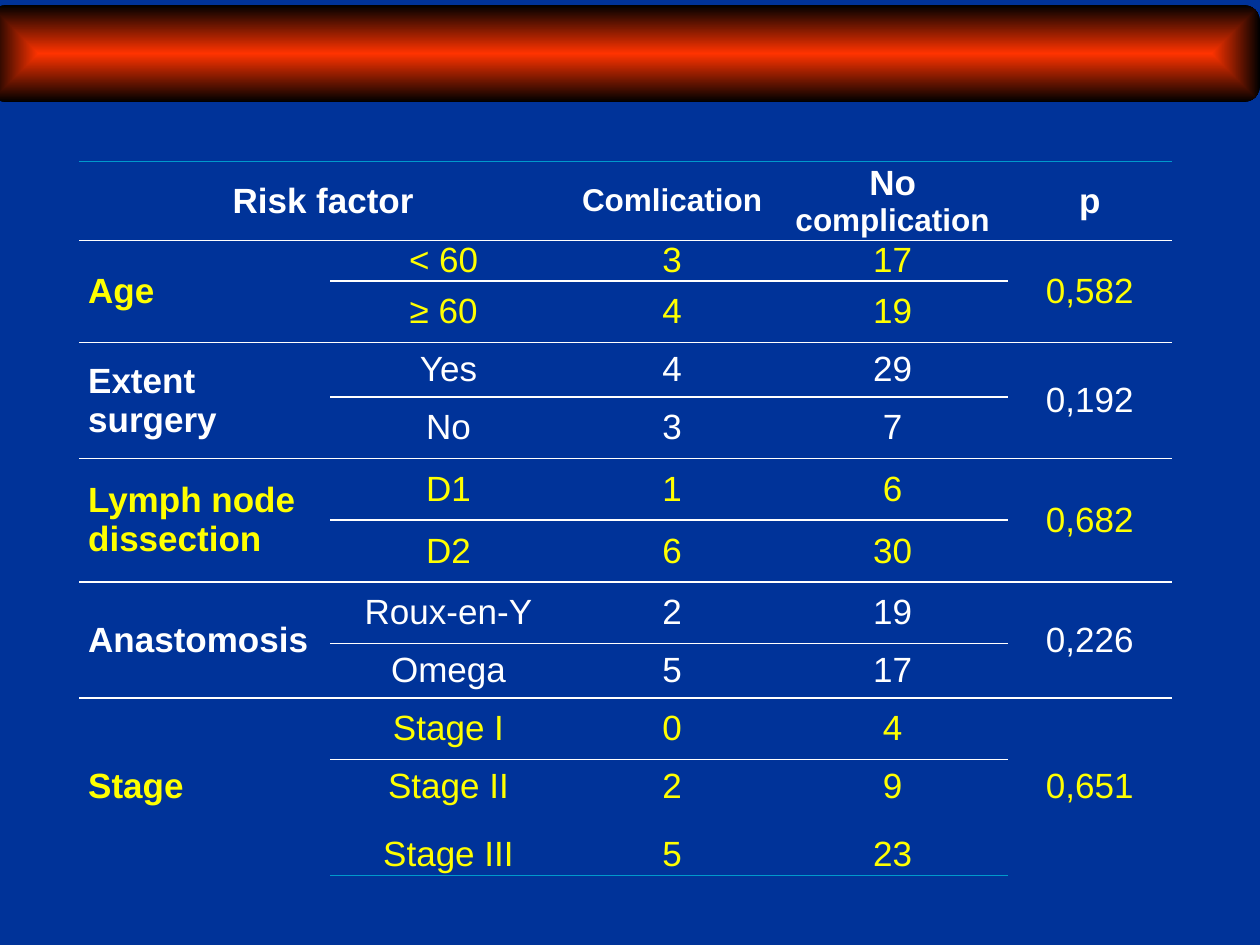
from dataclasses import dataclass

from lxml.etree import SubElement
from pptx import Presentation
from pptx.dml.color import RGBColor
from pptx.enum.shapes import MSO_SHAPE
from pptx.enum.text import MSO_ANCHOR, PP_ALIGN
from pptx.oxml.ns import qn
from pptx.util import Inches, Pt


@dataclass(frozen=True)
class Theme:
    background: str = "003399"
    banner_centre: str = "FF3300"
    banner_edge: str = "000000"
    white: str = "FFFFFF"
    yellow: str = "FFFF00"
    frame: str = "0099CC"
    font: str = "Arial"
    body_size: float = 20
    small_size: float = 18
    line_width: float = 1


THEME = Theme()

COLUMN_WIDTHS = [1.99, 1.88, 1.67, 1.83, 1.3]
ROW_HEIGHTS = [0.63, 0.32, 0.49, 0.43, 0.49, 0.49, 0.49, 0.49, 0.43, 0.49, 0.43, 0.49]

# Column, then (text, size) for each paragraph
HEADERS = [
    (0, [("Risk factor", THEME.body_size)]),
    (2, [("Comlication", THEME.small_size)]),
    (3, [("No", THEME.body_size), ("complication", THEME.small_size)]),
    (4, [("p", THEME.body_size)]),
]

# Risk factor, p value, then level, complication and no complication counts
GROUPS = [
    ("Age", "0,582", [("< 60 ", "3", "17"), ("≥ 60 ", "4", "19")]),
    ("Extent surgery", "0,192", [("Yes", "4", "29"), ("No", "3", "7")]),
    ("Lymph node dissection", "0,682", [("D1", "1", "6"), ("D2", "6", "30")]),
    ("Anastomosis", "0,226", [("Roux-en-Y", "2", "19"), ("Omega", "5", "17")]),
    ("Stage", "0,651", [("Stage I", "0", "4"), ("Stage II", "2", "9"), ("Stage III", "5", "23")]),
]


def add_banner(slide, left, top, width, height):
    banner = slide.shapes.add_shape(MSO_SHAPE.ROUNDED_RECTANGLE, left, top, width, height)
    banner.shadow.inherit = False
    banner.line.fill.background()
    banner.fill.gradient()
    stops = banner.fill.gradient_stops
    for stop, position, colour in zip(stops, (0, 1), (THEME.banner_centre, THEME.banner_edge)):
        stop.position = position
        stop.color.rgb = RGBColor.from_string(colour)

    # Let the gradient run from the centre to the outline
    gradient = banner._element.spPr.find(qn("a:gradFill"))
    gradient.remove(gradient.find(qn("a:lin")))
    outline = SubElement(gradient, qn("a:path"), path="shape")
    SubElement(outline, qn("a:fillToRect"), {side: "50000" for side in "ltrb"})


def set_borders(cell, top=None, bottom=None):
    properties = cell._tc.get_or_add_tcPr()
    for tag, colour in (("lnL", None), ("lnR", None), ("lnT", top), ("lnB", bottom)):
        line = SubElement(properties, qn(f"a:{tag}"), w=str(Pt(THEME.line_width)))
        if colour:
            fill = SubElement(line, qn("a:solidFill"))
            SubElement(fill, qn("a:srgbClr"), val=colour)
        else:
            SubElement(line, qn("a:noFill"))


def write_cell(cell, lines, colour, bold=False, align=PP_ALIGN.CENTER, spacing=None):
    for index, (text, size) in enumerate(lines):
        frame = cell.text_frame
        paragraph = frame.add_paragraph() if index else frame.paragraphs[0]
        paragraph.alignment = align
        if spacing:
            paragraph.line_spacing = spacing
        run = paragraph.add_run()
        run.text = text
        run.font.name = THEME.font
        run.font.size = Pt(size)
        run.font.bold = bold
        run.font.color.rgb = RGBColor.from_string(colour)


def rule_rows(table):
    # Row boundaries: the colour of each line, and whether it crosses every column
    last_row = len(ROW_HEIGHTS)
    lines = {0: (THEME.frame, True), last_row: (THEME.frame, True)}
    row = 1
    for _, _, levels in GROUPS:
        lines[row] = (THEME.white, True)
        lines[row + 1] = (THEME.white, False)
        row += len(levels)

    def line_colour(boundary, column):
        colour, full_width = lines.get(boundary, (None, False))
        return colour if full_width or column in (1, 2, 3) else None

    for row in range(last_row):
        for column in range(len(COLUMN_WIDTHS)):
            cell = table.cell(row, column)
            set_borders(cell, line_colour(row, column), line_colour(row + 1, column))
            cell.fill.background()
            cell.vertical_anchor = MSO_ANCHOR.MIDDLE
            cell.margin_left = cell.margin_right = Inches(0.07)
            cell.margin_top = cell.margin_bottom = 0


def add_risk_table(slide, left, top):
    width, height = Inches(sum(COLUMN_WIDTHS)), Inches(sum(ROW_HEIGHTS))
    table = slide.shapes.add_table(
        len(ROW_HEIGHTS), len(COLUMN_WIDTHS), left, top, width, height
    ).table
    table.first_row = table.horz_banding = False
    for column, column_width in zip(table.columns, COLUMN_WIDTHS):
        column.width = Inches(column_width)
    for row, row_height in zip(table.rows, ROW_HEIGHTS):
        row.height = Inches(row_height)
    rule_rows(table)

    # Header row
    table.cell(0, 0).merge(table.cell(0, 1))
    for column, lines in HEADERS:
        write_cell(table.cell(0, column), lines, THEME.white, bold=True)

    # One group of rows for each risk factor, in alternating colours
    row = 1
    for index, (factor, p_value, levels) in enumerate(GROUPS):
        colour = THEME.white if index % 2 else THEME.yellow
        end = row + len(levels) - 1
        for column in (0, 4):
            table.cell(row, column).merge(table.cell(end, column))
        write_cell(table.cell(row, 0), [(factor, THEME.body_size)], colour, True, PP_ALIGN.LEFT)
        write_cell(table.cell(row, 4), [(p_value, THEME.body_size)], colour)
        for level in levels:
            spacing = 1.5 if row == len(ROW_HEIGHTS) - 1 else None
            for column, text in enumerate(level, start=1):
                lines = [(text, THEME.body_size)]
                write_cell(table.cell(row, column), lines, colour, spacing=spacing)
            row += 1


def main():
    presentation = Presentation()
    presentation.slide_width = Inches(10)
    presentation.slide_height = Inches(7.5)
    slide = presentation.slides.add_slide(presentation.slide_layouts[6])
    slide.background.fill.solid()
    slide.background.fill.fore_color.rgb = RGBColor.from_string(THEME.background)

    add_banner(slide, Inches(-0.08), Inches(0.04), Inches(10.08), Inches(0.77))
    add_risk_table(slide, Inches(0.63), Inches(1.28))
    presentation.save("out.pptx")


if __name__ == "__main__":
    main()
